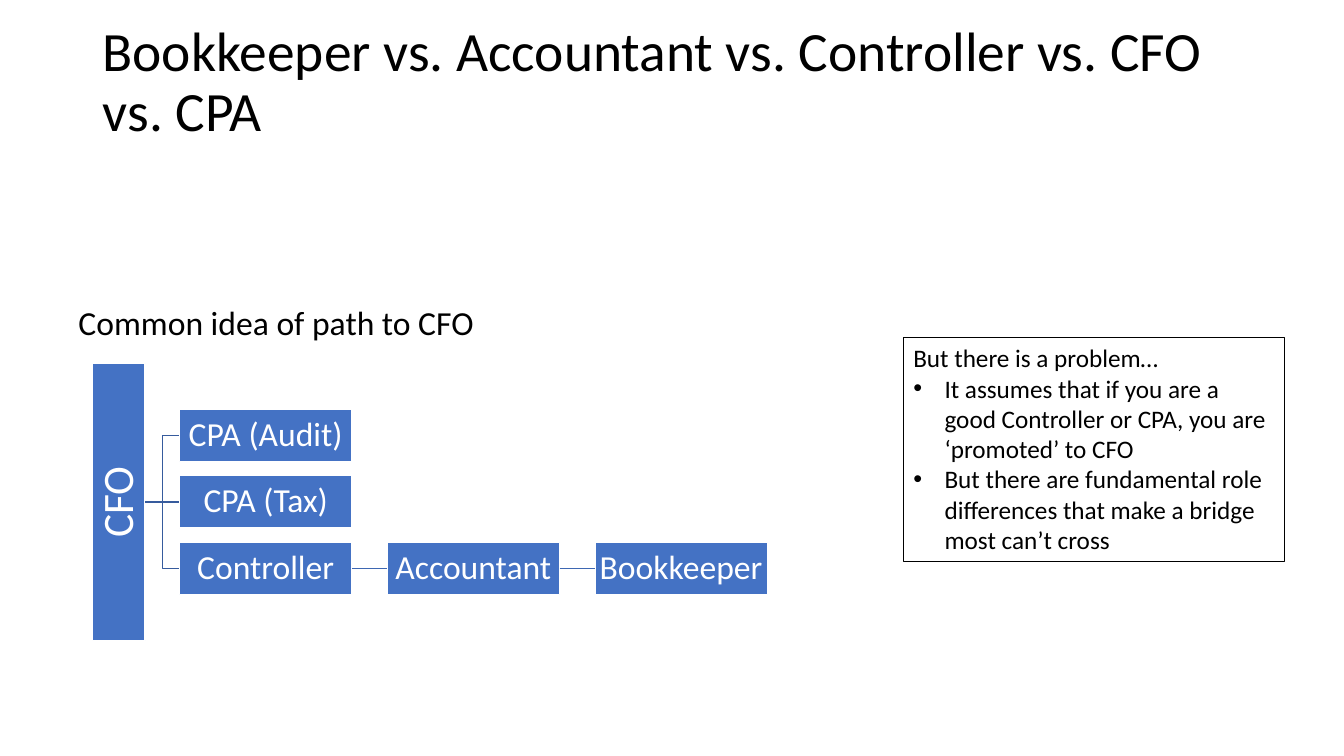
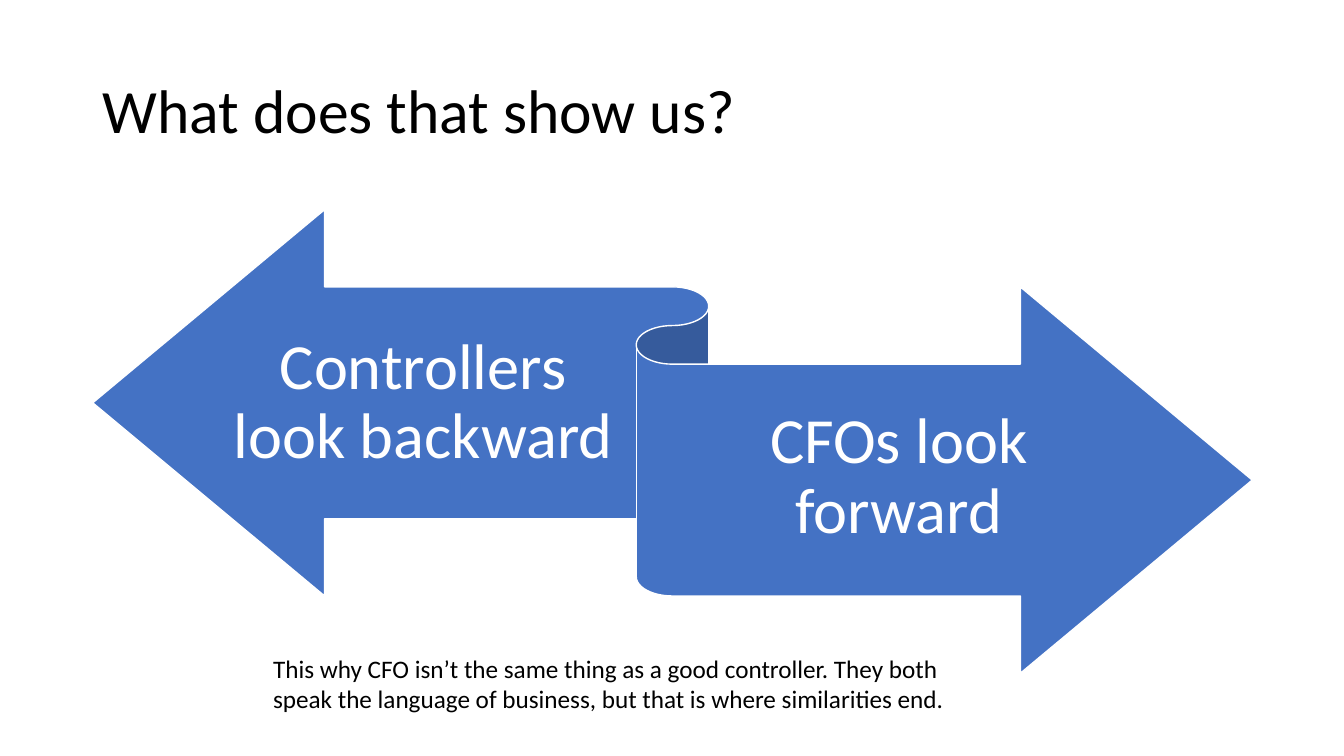
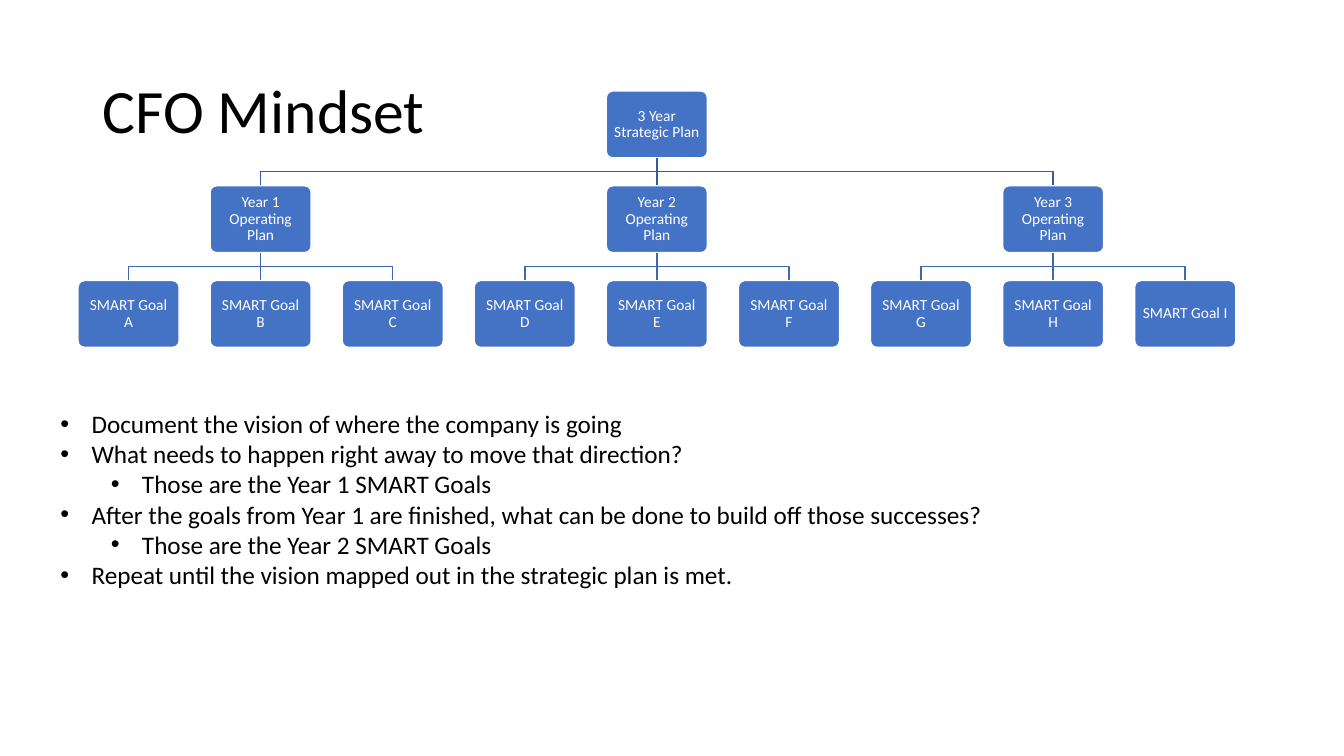
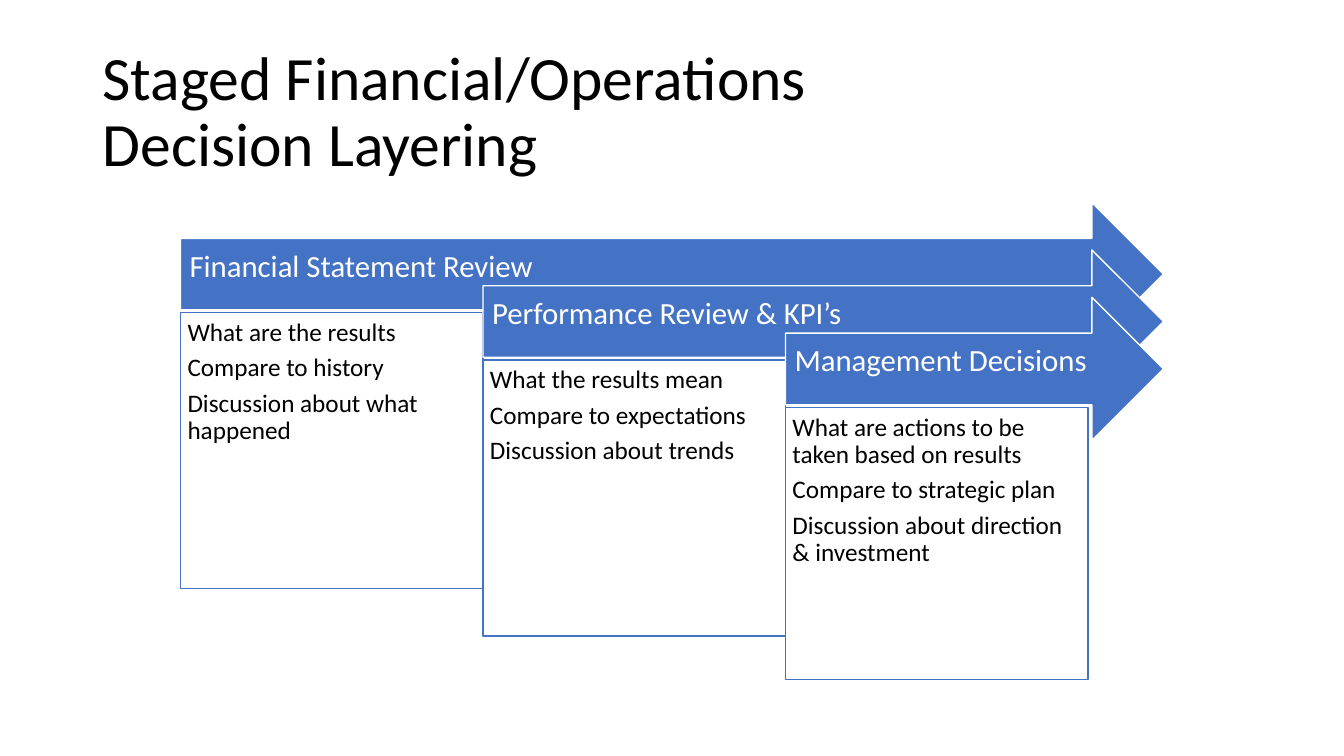
from dataclasses import dataclass
from typing import NamedTuple

from lxml import etree
from pptx import Presentation
from pptx import util as u
from pptx.dml.color import RGBColor
from pptx.enum import shapes, text
from pptx.oxml import ns

KIND = shapes.MSO_SHAPE
ANCHOR = text.MSO_ANCHOR
ALIGN = text.PP_ALIGN
TOP, LEFT, BOTTOM, RIGHT = range(4)


@dataclass(frozen=True)
class Theme:
    font: str = "Calibri"
    ink: str = "000000"
    paper: str = "FFFFFF"
    accent: str = "4472C4"
    link: str = "365B9D"
    sublink: str = "3E67B2"
    title: float = 44
    long_title: float = 39.6
    ribbon: float = 46
    root: float = 31
    node: float = 24
    stage: float = 22
    body: float = 18
    small: float = 11


class Box(NamedTuple):
    x: float
    y: float
    w: float
    h: float


class Para(NamedTuple):
    text: str
    bullet: bool = False
    level: int = 0


class Inset(NamedTuple):
    left: float
    top: float
    right: float
    bottom: float


class Look(NamedTuple):
    size: float
    color: str
    align: ALIGN = ALIGN.LEFT
    anchor: ANCHOR = ANCHOR.TOP
    inset: Inset = Inset(0.1, 0.05, 0.1, 0.05)
    spacing: float = 1.0
    after: float = 0


class Stage(NamedTuple):
    name: str
    points: list[str]
    height: float


class Year(NamedTuple):
    name: str
    goals: str


T = Theme()
PLAIN = Look(T.body, T.ink)
NODE = Look(T.node, T.paper, ALIGN.CENTER, ANCHOR.MIDDLE, Inset(0.02, 0.02, 0.02, 0.02), 0.9)
ROOT = NODE._replace(size=T.root)
CARD = NODE._replace(size=T.small, inset=Inset(0.05, 0.05, 0.05, 0.05))
RIBBON = NODE._replace(size=T.ribbon, inset=Inset(0, 0.18, 0, 0.19))
STAGE = Look(T.stage, T.paper, anchor=ANCHOR.MIDDLE, inset=Inset(0.09, 0.09, 0.28, 0.23), spacing=0.9)
DETAIL = Look(T.body, T.ink, inset=Inset(0.07, 0.07, 0.07, 0.07), spacing=0.9, after=6)


def rgb(value: str) -> RGBColor:
    return RGBColor.from_string(value)


def add_bullet(p, level: int) -> None:
    p.level = level
    pPr = p._p.get_or_add_pPr()
    pPr.set("marL", str(u.Inches(0.31 + 0.5 * level)))
    pPr.set("indent", str(u.Inches(-0.31)))
    etree.SubElement(pPr, ns.qn("a:buFont")).set("typeface", "Arial")
    etree.SubElement(pPr, ns.qn("a:buChar")).set("char", "•")


def write(sp, paras: list[Para], look: Look) -> None:
    tf = sp.text_frame
    tf.word_wrap = True
    tf.vertical_anchor = look.anchor
    tf.margin_left, tf.margin_top, tf.margin_right, tf.margin_bottom = map(u.Inches, look.inset)
    for i, para in enumerate(paras):
        p = tf.add_paragraph() if i else tf.paragraphs[0]
        p.alignment = look.align
        p.line_spacing = look.spacing
        p.space_after = u.Pt(look.after)
        if para.bullet:
            add_bullet(p, para.level)
        for j, line in enumerate(para.text.split("\n")):
            if j:
                p.add_line_break()
            r = p.add_run()
            r.text = line
            r.font.name = T.font
            r.font.size = u.Pt(look.size)
            r.font.color.rgb = rgb(look.color)


def add_text(s, box: Box, paras: list[Para], look: Look):
    sp = s.shapes.add_textbox(*map(u.Inches, box))
    write(sp, paras, look)
    return sp


def add_title(s, words: str, size: float = T.title, top: float = 0.4) -> None:
    look = Look(size, T.ink, anchor=ANCHOR.MIDDLE, spacing=0.9)
    add_text(s, Box(0.92, top, 11.5, 1.45), [Para(words)], look)


def add_box(s, kind: KIND, box: Box, fill: str = T.accent, line: str = T.paper, width: float = 1):
    sp = s.shapes.add_shape(kind, *map(u.Inches, box))
    sp.shadow.inherit = False
    sp.fill.solid()
    sp.fill.fore_color.rgb = rgb(fill)
    sp.line.color.rgb = rgb(line)
    sp.line.width = u.Pt(width)
    return sp


def add_node(s, box: Box, words: str, look: Look = NODE):
    sp = add_box(s, KIND.RECTANGLE, box)
    write(sp, [Para(words)], look)
    return sp


def add_card(s, box: Box, words: str):
    sp = add_box(s, KIND.ROUNDED_RECTANGLE, box, width=1.5)
    sp.adjustments[0] = 0.1
    write(sp, [Para(words)], CARD)
    return sp


def join(s, start, start_site: int, end, end_site: int, color: str, elbow: bool = False) -> None:
    kind = shapes.MSO_CONNECTOR.ELBOW if elbow else shapes.MSO_CONNECTOR.STRAIGHT
    c = s.shapes.add_connector(kind, 0, 0, 0, 0)
    c.begin_connect(start, start_site)
    c.end_connect(end, end_site)
    c.line.color.rgb = rgb(color)
    c.line.width = u.Pt(1)
    etree.SubElement(c._element.spPr, ns.qn("a:effectLst"))


def branch(s, parent, child, color: str) -> None:
    x1, y1 = parent.left + parent.width // 2, parent.top + parent.height
    x2, y2 = child.left + child.width // 2, child.top
    if x1 == x2:
        join(s, parent, BOTTOM, child, TOP, color)
        return
    middle = (y1 + y2) // 2
    fb = s.shapes.build_freeform(x1, y1)
    fb.add_line_segments([(x1, middle), (x2, middle), (x2, y2)], close=False)
    sp = fb.convert_to_shape()
    sp.shadow.inherit = False
    sp.fill.background()
    sp.line.color.rgb = rgb(color)
    sp.line.width = u.Pt(1)


def career_path(s) -> None:
    add_title(s, "Bookkeeper vs. Accountant vs. Controller vs. CFO vs. CPA", T.long_title, 0.1)
    middle, w, h = 4.98, 1.71, 0.52
    left, column_step, row_step = 1.78, 2.06, 0.66
    cfo = add_node(s, Box(0.92, middle - 2.75 / 2, h, 2.75), "CFO", ROOT)
    cfo.text_frame._txBody.bodyPr.set("vert", "vert270")
    for row, name in enumerate(["CPA (Audit)", "CPA (Tax)", "Controller"], -1):
        node = add_node(s, Box(left, middle - h / 2 + row * row_step, w, h), name)
        join(s, cfo, RIGHT, node, LEFT, T.link, elbow=row != 0)
    for column, name in enumerate(["Accountant", "Bookkeeper"], 1):
        box = Box(left + column * column_step, middle - h / 2 + row_step, w, h)
        junior = add_node(s, box, name)
        join(s, node, RIGHT, junior, LEFT, T.sublink)
        node = junior
    add_text(s, Box(0.68, 2.95, 4.28, 0.5), [Para("Common idea of path to CFO")], PLAIN._replace(size=T.node))
    problem = add_box(s, KIND.RECTANGLE, Box(8.96, 3.35, 3.78, 2.22), T.paper, T.ink)
    write(problem, [
        Para("But there is a problem…"),
        Para("It assumes that if you are a good Controller or CPA, you are ‘promoted’ to CFO", True),
        Para("But there are fundamental role differences that make a bridge most can’t cross", True),
    ], PLAIN)


def two_directions(s) -> None:
    add_title(s, "What does that show us?")
    add_box(s, KIND.LEFT_RIGHT_RIBBON, Box(0.92, 2.08, 11.5, 4.6))
    add_text(s, Box(2.3, 2.88, 3.79, 2.25), [Para("Controllers look backward")], RIBBON)
    add_text(s, Box(6.67, 3.62, 4.49, 2.25), [Para("CFOs look forward")], RIBBON)
    add_text(s, Box(2.61, 6.43, 7.25, 0.71), [
        Para("This why CFO isn’t the same thing as a good controller. They both speak the "
             "language of business, but that is where similarities end."),
    ], PLAIN)


def mindset(s) -> None:
    add_title(s, "CFO Mindset")

    def place(column: int, row: int) -> Box:
        return Box(0.77 + 1.31 * column, 0.9 + 0.94 * row, 1.01, 0.67)

    years = [Year("Year 1", "ABC"), Year("Year 2", "DEF"), Year("Year 3", "GHI")]
    strategy = add_card(s, place(4, 0), "3 Year Strategic Plan")
    for i, year in enumerate(years):
        plan = add_card(s, place(3 * i + 1, 1), f"{year.name} Operating Plan")
        branch(s, strategy, plan, T.link)
        for j, letter in enumerate(year.goals):
            goal = add_card(s, place(3 * i + j, 2), f"SMART Goal {letter}")
            branch(s, plan, goal, T.sublink)
    add_text(s, Box(0.5, 4, 12.21, 1.92), [
        Para("Document the vision of where the company is going", True),
        Para("What needs to happen right away to move that direction?", True),
        Para("Those are the Year 1 SMART Goals", True, 1),
        Para("After the goals from Year 1 are finished, what can be done to build off those successes?", True),
        Para("Those are the Year 2 SMART Goals", True, 1),
        Para("Repeat until the vision mapped out in the strategic plan is met.", True),
    ], PLAIN)


def decision_layers(s) -> None:
    add_title(s, "Staged Financial/Operations\nDecision Layering")
    stages = [
        Stage("Financial Statement Review",
              ["What are the results", "Compare to history", "Discussion about what happened"], 2.74),
        Stage("Performance Review & KPI’s",
              ["What the results mean", "Compare to expectations", "Discussion about trends"], 2.74),
        Stage("Management Decisions",
              ["What are actions to be taken based on results", "Compare to strategic plan",
               "Discussion about direction & investment"], 2.7),
    ]
    width, tip = 3, 11.54
    for i, stage in enumerate(stages):
        x, y = 1.79 + width * i, 2.01 + 0.47 * i
        arrow = add_box(s, KIND.RIGHT_ARROW, Box(x, y, tip - x, 1.42))
        write(arrow, [Para(stage.name)], STAGE)
        detail = add_box(s, KIND.RECTANGLE, Box(x, y + 1.09, width, stage.height), T.paper, T.accent)
        write(detail, [Para(point) for point in stage.points], DETAIL)


def main() -> None:
    prs = Presentation()
    prs.slide_width, prs.slide_height = u.Inches(13.33), u.Inches(7.5)
    for draw in (career_path, two_directions, mindset, decision_layers):
        draw(prs.slides.add_slide(prs.slide_layouts[6]))
    prs.save("out.pptx")


if __name__ == "__main__":
    main()
